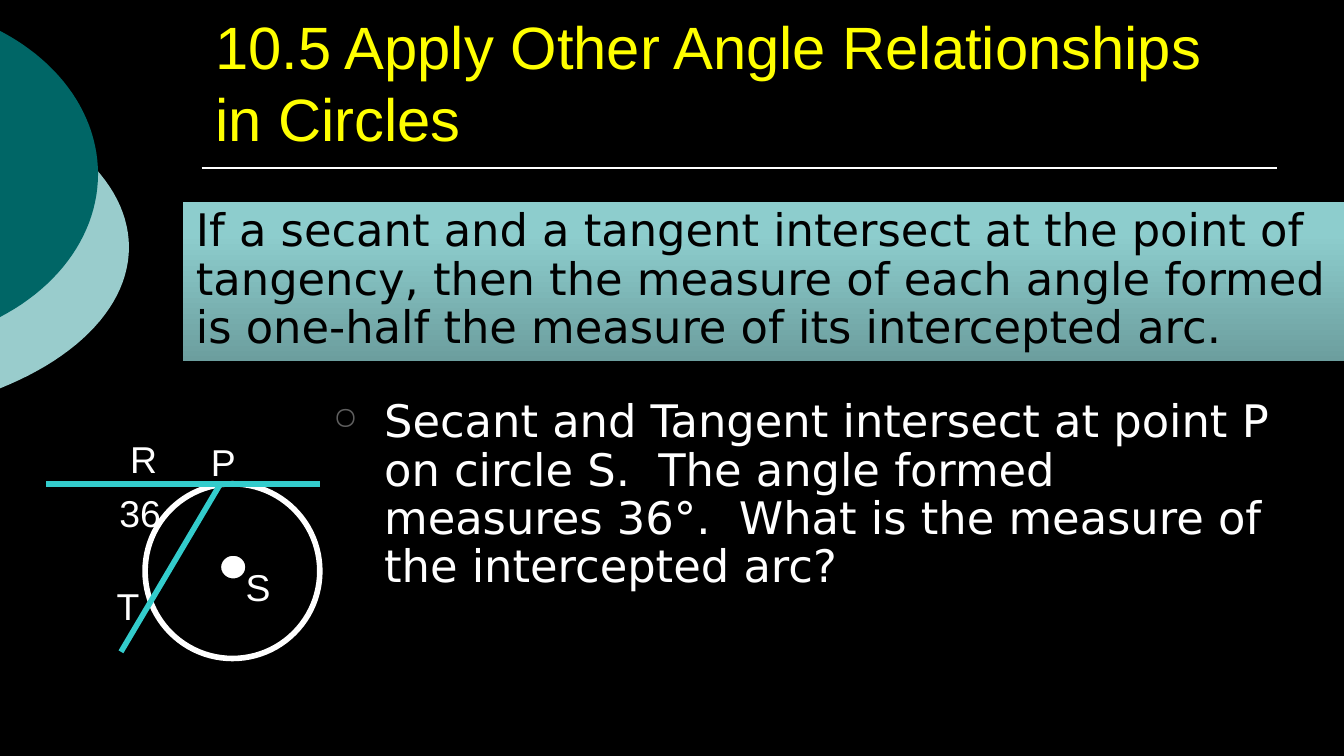
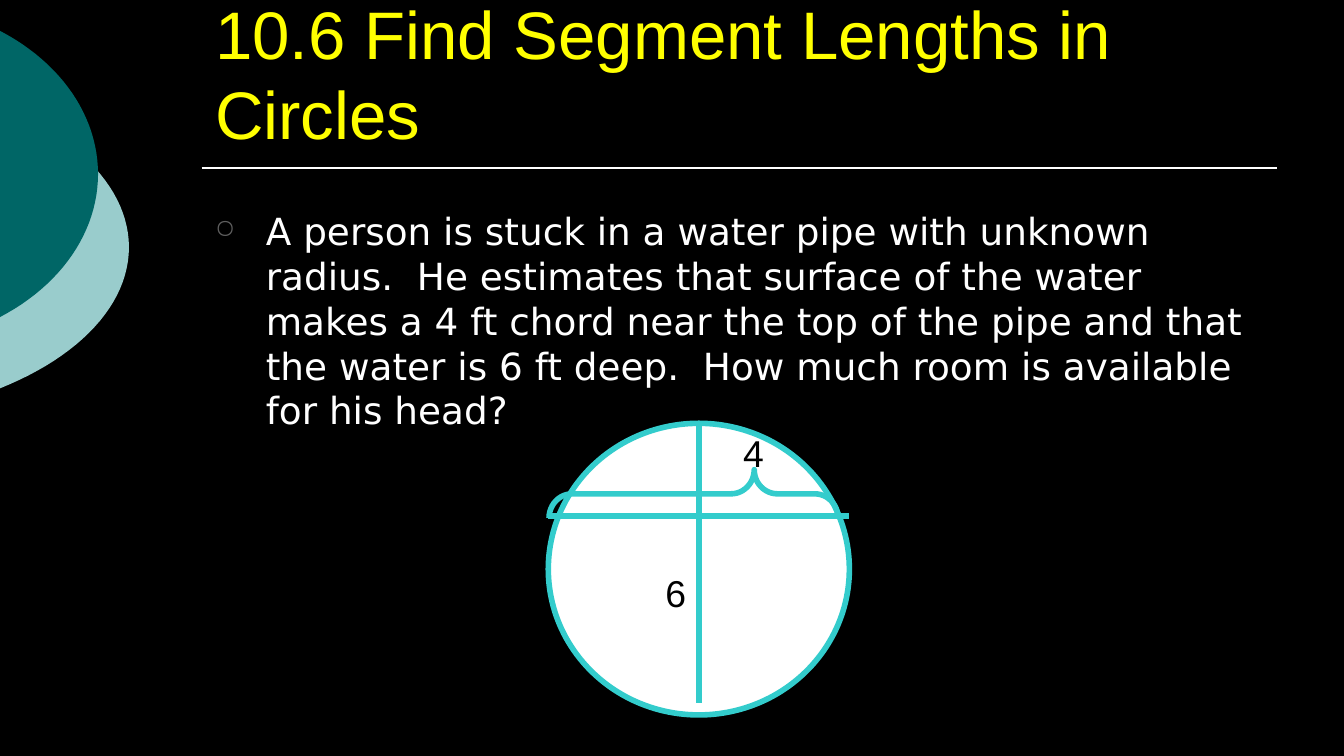
from dataclasses import dataclass

from lxml import etree
from pptx import Presentation
from pptx.dml.color import RGBColor
from pptx.enum.shapes import MSO_CONNECTOR, MSO_SHAPE
from pptx.enum.text import MSO_ANCHOR, MSO_AUTO_SIZE, PP_ALIGN
from pptx.oxml.ns import qn
from pptx.util import Inches, Pt

STRAIGHT = MSO_CONNECTOR.STRAIGHT
OVAL, RECTANGLE, BRACE = MSO_SHAPE.OVAL, MSO_SHAPE.RECTANGLE, MSO_SHAPE.LEFT_BRACE
TOP, BOTTOM = MSO_ANCHOR.TOP, MSO_ANCHOR.BOTTOM
LEFT, NO_FIT = PP_ALIGN.LEFT, MSO_AUTO_SIZE.NONE
TITLE_ONLY = 5

# The page is a grid of square cells, 100 across and 56.25 down
CELL = Inches(0.1)
COLUMNS, ROWS = 100, 56.25


@dataclass(frozen=True)
class Theme:
    black: str = "000000"
    white: str = "FFFFFF"
    title: str = "FFFF00"
    accent: str = "33CCCC"
    bullet: str = "5F5F5F"
    dark_teal: str = "006666"
    pale_teal: str = "99CCCC"
    band_low: str = "6C9E9E"
    band_high: str = "8DCDCD"
    heading_font: str = "Arial"
    body_font: str = "DejaVu Sans"
    long_title_size: int = 32
    title_size: int = 36
    large_size: int = 24
    text_size: int = 20
    figure_line: float = 3
    rule_line: float = 1
    dot_line: float = 0.75


THEME = Theme()


@dataclass(frozen=True)
class Box:
    col: float
    row: float
    cols: float
    rows: float

    def area(self, col, row, cols, rows):
        return Box(self.col + col, self.row + row, cols, rows)

    def point(self, col, row):
        return round((self.col + col) * CELL), round((self.row + row) * CELL)

    def place(self):
        return tuple(round(n * CELL) for n in (self.col, self.row, self.cols, self.rows))


PAGE = Box(0, 0, COLUMNS, ROWS)
TITLE_BOX = PAGE.area(15, 2.5, 80, 9.4)


def rgb(value):
    return RGBColor.from_string(value)


def set_all(target, values):
    for name, value in values.items():
        setattr(target, name, value)


def write(shape, text, size, color, font, anchor=TOP, spacing=None):
    frame = shape.text_frame
    set_all(frame, {"word_wrap": True, "auto_size": NO_FIT, "vertical_anchor": anchor})
    para = frame.paragraphs[0]
    set_all(para, {"alignment": LEFT, "line_spacing": spacing})
    span = para.add_run()
    span.text = text
    set_all(span.font, {"name": font, "size": Pt(size)})
    span.font.color.rgb = rgb(color)
    return para


def add_line(page, start, end, color, width):
    line = page.shapes.add_connector(STRAIGHT, *start, *end)
    line.line.color.rgb = rgb(color)
    line.line.width = Pt(width)
    etree.SubElement(line._element.spPr, qn("a:effectLst"))


def add_figure(page, kind, box, fill=None, line=None, width=THEME.figure_line):
    shape = page.shapes.add_shape(kind, *box.place())
    shape.shadow.inherit = False
    if fill:
        shape.fill.solid()
        shape.fill.fore_color.rgb = rgb(fill)
    else:
        shape.fill.background()
    if line:
        shape.line.color.rgb = rgb(line)
        shape.line.width = Pt(width)
    else:
        shape.line.fill.background()
    return shape


def add_label(page, text, box, color, indent=0.0):
    label = page.shapes.add_textbox(*box.place())
    write(label, text, THEME.text_size, color, THEME.heading_font)
    label.text_frame.margin_left = Inches(0.1 + indent)


# Corner crescents: half an outline is given, the other half mirrors it
def curve(points, steps=24):
    for step in range(steps + 1):
        t = step / steps
        weights = ((1 - t) ** 3, 3 * t * (1 - t) ** 2, 3 * t * t * (1 - t), t ** 3)
        yield tuple(sum(w * p[axis] for w, p in zip(weights, points)) for axis in (0, 1))


def add_crescent(page, half, color):
    middle = half[-1][1]
    upper = [PAGE.point(*spot) for spot in curve(half)]
    mirror = [(col, 2 * middle - row) for col, row in reversed(half)]
    lower = [PAGE.point(*spot) for spot in curve(mirror)]
    builder = page.shapes.build_freeform(*upper[0])
    builder.add_line_segments(upper[1:] + lower[1:], close=True)
    shape = builder.convert_to_shape()
    shape.shadow.inherit = False
    shape.fill.solid()
    shape.fill.fore_color.rgb = rgb(color)
    shape.line.fill.background()


# Shared frame: crescents, rule and title
def add_page(deck, title, size):
    page = deck.slides.add_slide(deck.slide_layouts[TITLE_ONLY])
    add_crescent(page, [(0, 7.9), (6, 10.3), (9.6, 14.2), (9.6, 18.4)], THEME.pale_teal)
    add_crescent(page, [(0, 2.3), (4.6, 4.7), (7.3, 8.7), (7.3, 12.95)], THEME.dark_teal)
    add_line(page, PAGE.point(15, 12.5), PAGE.point(95, 12.5), THEME.white, THEME.rule_line)
    heading = page.shapes.title
    set_all(heading, dict(zip(("left", "top", "width", "height"), TITLE_BOX.place())))
    write(heading, title, size, THEME.title, THEME.heading_font, BOTTOM)
    return page


def add_bullet(page, box, text, size, spacing=None):
    body = page.shapes.add_textbox(*box.place())
    para = write(body, text, size, THEME.white, THEME.body_font, spacing=spacing)
    props = para._p.get_or_add_pPr()
    indent = Inches(0.38)
    props.set("marL", str(indent))
    props.set("indent", str(-indent))
    before = etree.SubElement(props, qn("a:spcBef"))
    etree.SubElement(before, qn("a:spcPct"), val="20000")
    tint = etree.SubElement(props, qn("a:buClr"))
    etree.SubElement(tint, qn("a:srgbClr"), val=THEME.bullet)
    etree.SubElement(props, qn("a:buSzPct"), val="70000")
    etree.SubElement(props, qn("a:buChar"), char="○")


def add_theorem(page, box, text):
    band = add_figure(page, RECTANGLE, box)
    band.fill.gradient()
    band.fill.gradient_angle = 90
    stops = zip(band.fill.gradient_stops, ((0, THEME.band_low), (0.8, THEME.band_high)))
    for stop, (position, color) in stops:
        stop.position = position
        stop.color.rgb = rgb(color)
    write(band, text, THEME.large_size, THEME.black, THEME.body_font, spacing=0.9)


# Circle S with a tangent and a secant meeting at P
def draw_tangent_circle(page, box):
    add_figure(page, OVAL, box.area(7.4, 4, 13, 13), line=THEME.white)
    for start, end in (((20.4, 4), (0, 4)), ((13, 4), (5.6, 16.5))):
        add_line(page, box.point(*start), box.point(*end), THEME.accent, THEME.figure_line)
    add_figure(page, OVAL, box.area(13, 9.3, 1.9, 1.8), THEME.white, THEME.black, THEME.dot_line)
    labels = (("P", 11.3, 0.2, 3.7), ("T", 4.3, 10.9, 3.7), ("R", 5.3, 0, 3.7),
              ("36", 4.5, 4, 7.6), ("S", 13.9, 9.5, 3.7))
    for text, col, row, cols in labels:
        add_label(page, text, box.area(col, row, cols, 3.6), THEME.white)


# Pipe with its diameter, the water surface and a brace over the chord
def draw_pipe(page, box):
    add_figure(page, OVAL, box, THEME.white, THEME.accent)
    middle = box.cols / 2
    for start, end in (((middle, 0), (middle, 20.8)), ((0, 6.9), (box.cols, 6.9))):
        add_line(page, box.point(*start), box.point(*end), THEME.accent, THEME.figure_line)
    brace = add_figure(page, BRACE, box.area(9, -5.5, 3.6, 21.5), line=THEME.accent)
    brace.rotation = 90
    brace.adjustments[0], brace.adjustments[1] = 0.48, 0.29
    for text, col, row, indent in (("4", middle, 0, 0.23), ("6", 3.8, 10.4, 0.39)):
        add_label(page, text, box.area(col, row, 7.5, 7), THEME.black, indent)


def build_angles(deck):
    page = add_page(deck, "10.5 Apply Other Angle Relationships in Circles",
                    THEME.long_title_size)
    add_bullet(page, PAGE.area(23.8, 29.2, 71.9, 21.6),
               "Secant and Tangent intersect at point P on circle S.  The angle formed "
               "measures 36°.  What is the measure of the intercepted arc?",
               THEME.large_size, 0.9)
    add_theorem(page, PAGE.area(13.6, 15, 86.4, 11.9),
                "If a secant and a tangent intersect at the point of tangency, then the "
                "measure of each angle formed is one-half the measure of its intercepted arc.")
    draw_tangent_circle(page, PAGE.area(3.4, 32, 20.4, 17))


def build_segments(deck):
    page = add_page(deck, "10.6 Find Segment Lengths in Circles", THEME.title_size)
    add_bullet(page, PAGE.area(15, 15, 80, 33.8),
               "A person is stuck in a water pipe with unknown radius.  He estimates that "
               "surface of the water makes a 4 ft chord near the top of the pipe and that "
               "the water is 6 ft deep.  How much room is available for his head?",
               THEME.text_size)
    draw_pipe(page, PAGE.area(40.8, 31.5, 22.4, 21.7))


def main():
    deck = Presentation()
    deck.slide_width, deck.slide_height = round(COLUMNS * CELL), round(ROWS * CELL)
    backdrop = deck.slide_master.background.fill
    backdrop.solid()
    backdrop.fore_color.rgb = rgb(THEME.black)
    build_angles(deck)
    build_segments(deck)
    deck.save("out.pptx")


if __name__ == "__main__":
    main()
